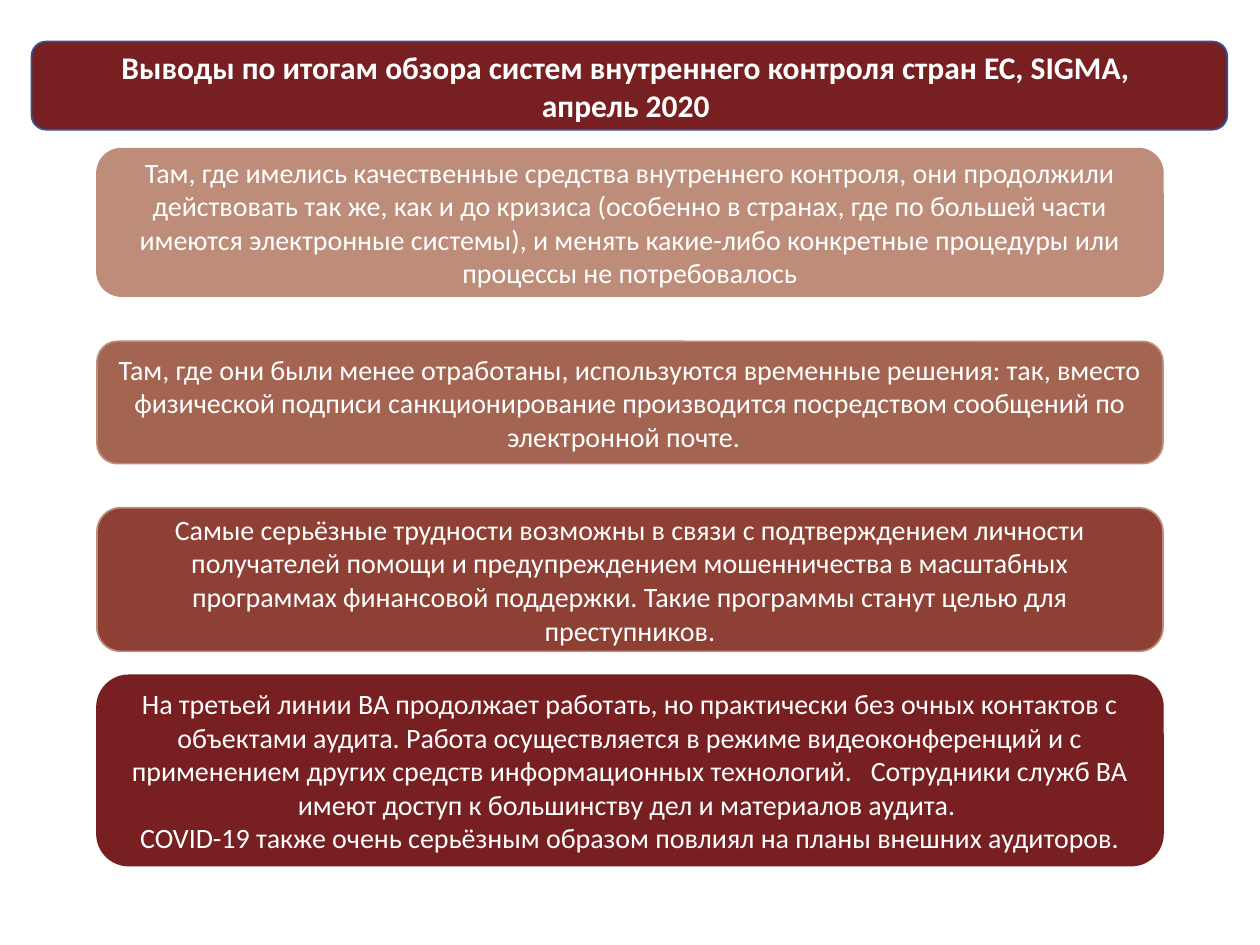
from pptx import Presentation
from pptx import util as u
from pptx.dml.color import RGBColor
from pptx.enum import shapes, text

WIDTH, HEIGHT = 10, 7.5
COLORS = {
    "white": "FFFFFF", "navy": "325491", "wine": "781F21",
    "brick": "8E4035", "clay": "A46452", "sand": "BD8D7A",
}
TITLE = [
    "Выводы по итогам обзора систем внутреннего контроля стран ЕС, SIGMA, ",
    "апрель 2020 ",
]
FINDINGS = [
    (1.18, 1.17, "sand", "sand", [
        "Там, где имелись качественные средства внутреннего контроля, они продолжили "
        "действовать так же, как и до кризиса (особенно в странах, где по большей части "
        "имеются электронные системы), и менять какие-либо конкретные процедуры или "
        "процессы не потребовалось"]),
    (2.71, 0.97, "clay", "sand", [
        "Там, где они были менее отработаны, используются временные решения: так, вместо "
        "физической подписи санкционирование производится посредством сообщений по "
        "электронной почте.  "]),
    (4.03, 1.14, "brick", "sand", [
        "Самые серьёзные трудности возможны в связи с подтверждением личности "
        "получателей помощи и предупреждением мошенничества в масштабных "
        "программах финансовой поддержки. Такие программы станут целью для "
        "преступников."]),
    (5.36, 1.51, "wine", "wine", [
        "На третьей линии ВА продолжает работать, но практически без очных контактов с "
        "объектами аудита. Работа осуществляется в режиме видеоконференций и с "
        "применением других средств информационных технологий.   Сотрудники служб ВА "
        "имеют доступ к большинству дел и материалов аудита. ",
        "COVID-19 также очень серьёзным образом повлиял на планы внешних аудиторов."]),
]


class SlideBuilder:
    frame_format = {
        "word_wrap": True,
        "auto_size": text.MSO_AUTO_SIZE.NONE,
        "vertical_anchor": text.MSO_ANCHOR.MIDDLE,
    }
    font_format = {"name": "Calibri", "size": u.Pt(16), "bold": False}

    def __init__(self, deck):
        self.deck = deck
        self.slide = deck.slides.add_slide(deck.slide_layouts[5])

    def area(self, left, top, width, height):
        across, down = self.deck.slide_width, self.deck.slide_height
        return {
            "left": round(left / WIDTH * across), "top": round(top / HEIGHT * down),
            "width": round(width / WIDTH * across), "height": round(height / HEIGHT * down),
        }

    def apply(self, target, values):
        for name, value in values.items():
            setattr(target, name, value)

    def color(self, name):
        return RGBColor.from_string(COLORS[name])

    def fill_text(self, box, lines, **font_changes):
        frame = box.text_frame
        self.apply(frame, self.frame_format)
        for index, line in enumerate(lines):
            para = frame.add_paragraph() if index else frame.paragraphs[0]
            para.alignment = text.PP_ALIGN.CENTER
            span = para.add_run()
            span.text = line
            self.apply(span.font, self.font_format | font_changes)
            span.font.color.rgb = self.color("white")

    def panel(self, area, fill, line):
        box = self.slide.shapes.add_shape(
            shapes.MSO_SHAPE.ROUNDED_RECTANGLE, **self.area(*area))
        box.shadow.inherit = False
        box.fill.solid()
        box.fill.fore_color.rgb = self.color(fill)
        box.line.color.rgb = self.color(line)
        box.line.width = u.Pt(1)
        return box

    def title(self, area, lines):
        banner = self.panel(area, "wine", "navy")
        heading = self.slide.shapes.title
        self.apply(heading, self.area(*area))
        self.fill_text(heading, lines, size=u.Pt(18), bold=True)
        banner.element.addnext(heading.element)

    def finding(self, top, height, fill, line, lines):
        margin = 0.77
        box = self.panel((margin, top, WIDTH - 2 * margin, height), fill, line)
        self.fill_text(box, lines)


def main():
    deck = Presentation()
    deck.slide_width, deck.slide_height = u.Inches(WIDTH), u.Inches(HEIGHT)
    builder = SlideBuilder(deck)
    builder.title((0.25, 0.33, 9.49, 0.7), TITLE)
    for finding in FINDINGS:
        builder.finding(*finding)
    deck.save("out.pptx")


if __name__ == "__main__":
    main()
